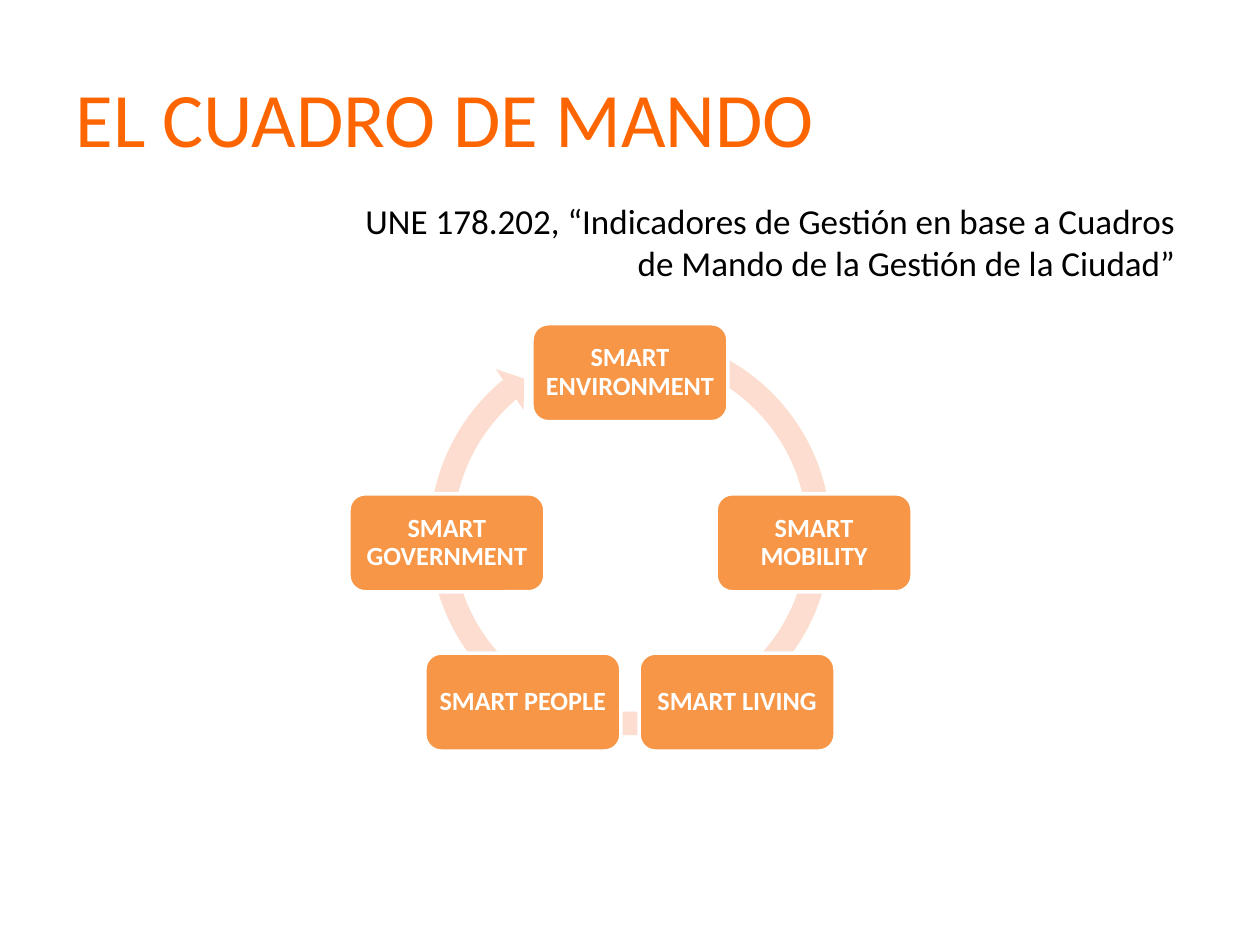
from dataclasses import dataclass

from pptx import Presentation
from pptx import util as u
from pptx.dml.color import RGBColor
from pptx.enum import shapes, text


@dataclass(frozen=True)
class Theme:
    font: str = "Calibri"
    title_color: RGBColor = RGBColor(0xFD, 0x65, 0x00)
    body_color: RGBColor = RGBColor(0, 0, 0)
    box_color: RGBColor = RGBColor(0xF7, 0x96, 0x46)
    ring_color: RGBColor = RGBColor(0xFC, 0xDD, 0xCF)
    white: RGBColor = RGBColor(0xFF, 0xFF, 0xFF)
    title_size: int = 44
    body_size: int = 20
    box_size: int = 15


theme = Theme()


def add_text(frame, words, size, color, align, bold=False):
    frame.word_wrap = True
    paragraph = frame.paragraphs[0]
    paragraph.alignment = align
    run = paragraph.add_run()
    run.text = words
    run.font.name = theme.font
    run.font.size = u.Pt(size)
    run.font.color.rgb = color
    run.font.bold = bold
    return paragraph


presentation = Presentation()
presentation.slide_width = u.Pt(720)
presentation.slide_height = u.Pt(540)
slide = presentation.slides.add_slide(presentation.slide_layouts[5])

# Title
title = slide.shapes.title
title.left, title.top, title.width, title.height = u.Pt(36), u.Pt(21.6), u.Pt(648), u.Pt(90)
title.text_frame.vertical_anchor = text.MSO_ANCHOR.MIDDLE
add_text(title.text_frame, "EL CUADRO DE MANDO", theme.title_size,
         theme.title_color, text.PP_ALIGN.LEFT)

# Standard reference
reference = slide.shapes.add_textbox(u.Pt(195.8), u.Pt(110.4), u.Pt(483), u.Pt(55.7))
add_text(reference.text_frame,
         "UNE 178.202, “Indicadores de Gestión en base a Cuadros de Mando de la Gestión de la Ciudad”",
         theme.body_size, theme.body_color, text.PP_ALIGN.RIGHT)

# Cycle ring behind the boxes
ring = slide.shapes.add_shape(shapes.MSO_SHAPE.CIRCULAR_ARROW,
                              u.Pt(238.2), u.Pt(183.6), u.Pt(244), u.Pt(244))
for index, value in enumerate((0.055, 3.31, 138.17, 173.61, 0.058)):
    ring.adjustments[index] = value
ring.shadow.inherit = False
ring.fill.solid()
ring.fill.fore_color.rgb = theme.ring_color
ring.line.fill.background()

# Smart city areas: offset from the vertical axis, and top
axis, box_width, box_height = 360, 112, 56
top_row, middle_row, bottom_row = 185, 282.2, 373.2
areas = [
    ("SMART ENVIRONMENT", 0, top_row),
    ("SMART MOBILITY", 105.2, middle_row),
    ("SMART LIVING", 61.2, bottom_row),
    ("SMART PEOPLE", -61.2, bottom_row),
    ("SMART GOVERNMENT", -104.6, middle_row),
]
for name, offset, top in areas:
    box = slide.shapes.add_shape(shapes.MSO_SHAPE.ROUNDED_RECTANGLE,
                                 u.Pt(axis + offset - box_width / 2), u.Pt(top),
                                 u.Pt(box_width), u.Pt(box_height))
    box.shadow.inherit = False
    box.fill.solid()
    box.fill.fore_color.rgb = theme.box_color
    box.line.color.rgb = theme.white
    box.line.width = u.Pt(2)
    frame = box.text_frame
    frame.margin_left = frame.margin_right = u.Pt(4.5)
    frame.margin_top = frame.margin_bottom = u.Pt(4.5)
    frame.vertical_anchor = text.MSO_ANCHOR.MIDDLE
    paragraph = add_text(frame, name, theme.box_size, theme.white,
                         text.PP_ALIGN.CENTER, bold=True)
    paragraph.line_spacing = 0.9

presentation.save("out.pptx")
